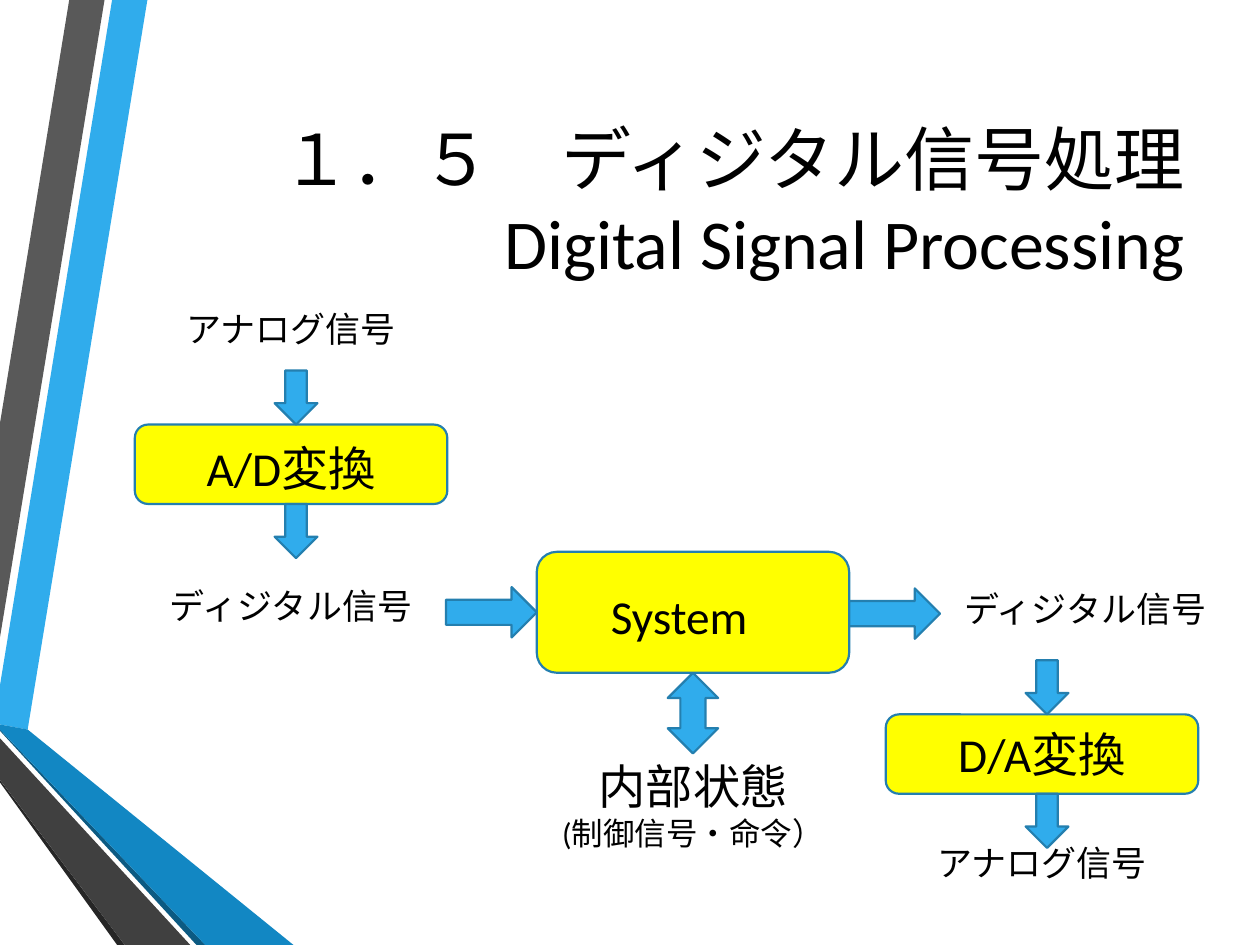
from pptx import Presentation
from pptx.dml.color import RGBColor
from pptx.enum.shapes import MSO_SHAPE
from pptx.enum.text import MSO_ANCHOR, MSO_AUTO_SIZE, PP_ALIGN
from pptx.util import Inches, Pt

BLACK = RGBColor(0x00, 0x00, 0x00)
YELLOW = RGBColor(0xFF, 0xFF, 0x00)
SKY = RGBColor(0x30, 0xAC, 0xEC)
OUTLINE = RGBColor(0x24, 0x7F, 0xAF)
BLUE = RGBColor(0x12, 0x87, 0xC3)
NAVY = RGBColor(0x0C, 0x5A, 0x82)
GRAY = RGBColor(0x59, 0x59, 0x59)
DARK_GRAY = RGBColor(0x40, 0x40, 0x40)
CHARCOAL = RGBColor(0x26, 0x26, 0x26)
FONT = "Calibri"

# Content: lengths in inches, text sizes in points
TITLE = "１．５\u3000ディジタル信号処理\vDigital Signal Processing".replace("\\u3000", "\u3000")
RIBBONS = [
    (SKY, [(0, 5.44), (0, 5.75), (0.22, 5.79), (1.17, 0), (0.89, 0)]),
    (GRAY, [(0.83, 0), (0.55, 0), (0, 3.36), (0, 5.06)]),
    (CHARCOAL, [(0, 6.19), (0, 6.21), (0.93, 7.5), (0.99, 7.5)]),
    (NAVY, [(0, 5.79), (0, 5.8), (1.56, 7.5), (1.63, 7.5)]),
    (BLUE, [(0, 5.79), (1.63, 7.5), (2.33, 7.5), (0.22, 5.79), (0, 5.75)]),
    (DARK_GRAY, [(0, 6.19), (0.99, 7.5), (1.51, 7.5), (0, 5.86)]),
]

# Grid: every box is one column wide
COLUMN = 2.48
LEFT, CENTER, RIGHT = 1.07, 4.26, 7.03
SYSTEM_TOP, SYSTEM_HEIGHT = 4.38, 0.96
CONVERTER_HEIGHT = 0.63
DOWN_WIDTH, DOWN_HEIGHT = 0.34, 0.43
FLOW_WIDTH, FLOW_HEIGHT = 0.72, 0.4

# Converters: left, top, label, label top
CONVERTERS = [
    (LEFT, 3.37, "A/D変換", 3.44),
    (RIGHT, 5.67, "D/A変換", 5.71),
]
# Labels: left, top, width, height, lines of (text, size)
LABELS = [
    (4.15, 4.61, COLUMN, 0.56, [("System", 27)]),
    (CENTER, 5.96, COLUMN, 0.86, [("内部状態", 27), ("(制御信号・命令）", 18)]),
    (LEFT, 2.39, COLUMN, 0.44, [("アナログ信号", 20)]),
    (LEFT, 4.59, COLUMN, 0.44, [("ディジタル信号", 20)]),
    (7.46, 4.61, 2.31, 0.44, [("ディジタル信号", 20)]),
    (RIGHT, 6.63, COLUMN, 0.44, [("アナログ信号", 20)]),
]


def add_ribbon(slide, color, points):
    corners = [(Inches(x), Inches(y)) for x, y in points]
    builder = slide.shapes.build_freeform(*corners[0])
    builder.add_line_segments(corners[1:], close=True)
    shape = builder.convert_to_shape()
    shape.shadow.inherit = False
    shape.fill.solid()
    shape.fill.fore_color.rgb = color
    shape.line.fill.background()


def add_block(slide, kind, left, top, width, height, color=SKY):
    shape = slide.shapes.add_shape(
        kind, Inches(left), Inches(top), Inches(width), Inches(height))
    shape.shadow.inherit = False
    shape.fill.solid()
    shape.fill.fore_color.rgb = color
    shape.line.color.rgb = OUTLINE
    shape.line.width = Pt(1.25)


def add_text(slide, left, top, width, height, lines, align=PP_ALIGN.CENTER):
    box = slide.shapes.add_textbox(
        Inches(left), Inches(top), Inches(width), Inches(height))
    frame = box.text_frame
    frame.word_wrap = True
    frame.text = "\n".join(text for text, _ in lines)
    for paragraph, (_, size) in zip(frame.paragraphs, lines):
        paragraph.alignment = align
        paragraph.font.name = FONT
        paragraph.font.size = Pt(size)
        paragraph.font.color.rgb = BLACK
    return frame


def add_converter(slide, left, top, label, label_top):
    """A box with one arrow leading in from above and one leading out below."""
    add_block(slide, MSO_SHAPE.ROUNDED_RECTANGLE, left, top,
              COLUMN, CONVERTER_HEIGHT, YELLOW)
    add_text(slide, left, label_top, COLUMN, 0.56, [(label, 27)])
    arrow_left = left + 1.11
    for arrow_top in (top - DOWN_HEIGHT, top + CONVERTER_HEIGHT):
        add_block(slide, MSO_SHAPE.DOWN_ARROW, arrow_left, arrow_top,
                  DOWN_WIDTH, DOWN_HEIGHT)


def main():
    presentation = Presentation()
    presentation.slide_width, presentation.slide_height = Inches(10), Inches(7.5)
    slide = presentation.slides.add_slide(presentation.slide_layouts[6])

    # Folded ribbons along the left edge
    for color, points in RIBBONS:
        add_ribbon(slide, color, points)

    # Title
    title = add_text(slide, LEFT, 0.5, 8.43, 2.17, [(TITLE, 40)], PP_ALIGN.RIGHT)
    title.vertical_anchor = MSO_ANCHOR.MIDDLE

    # System box with the arrows in, out and to its state
    add_block(slide, MSO_SHAPE.ROUNDED_RECTANGLE, CENTER, SYSTEM_TOP,
              COLUMN, SYSTEM_HEIGHT, YELLOW)
    for arrow_left, arrow_top in ((CENTER - FLOW_WIDTH, 4.66), (CENTER + COLUMN, 4.67)):
        add_block(slide, MSO_SHAPE.RIGHT_ARROW, arrow_left, arrow_top,
                  FLOW_WIDTH, FLOW_HEIGHT)
    add_block(slide, MSO_SHAPE.UP_DOWN_ARROW, CENTER + (COLUMN - 0.4) / 2,
              SYSTEM_TOP + SYSTEM_HEIGHT, 0.4, 0.64)

    # Converters and signal names
    for converter in CONVERTERS:
        add_converter(slide, *converter)
    for label in LABELS:
        add_text(slide, *label).auto_size = MSO_AUTO_SIZE.SHAPE_TO_FIT_TEXT

    presentation.save("out.pptx")


if __name__ == "__main__":
    main()
